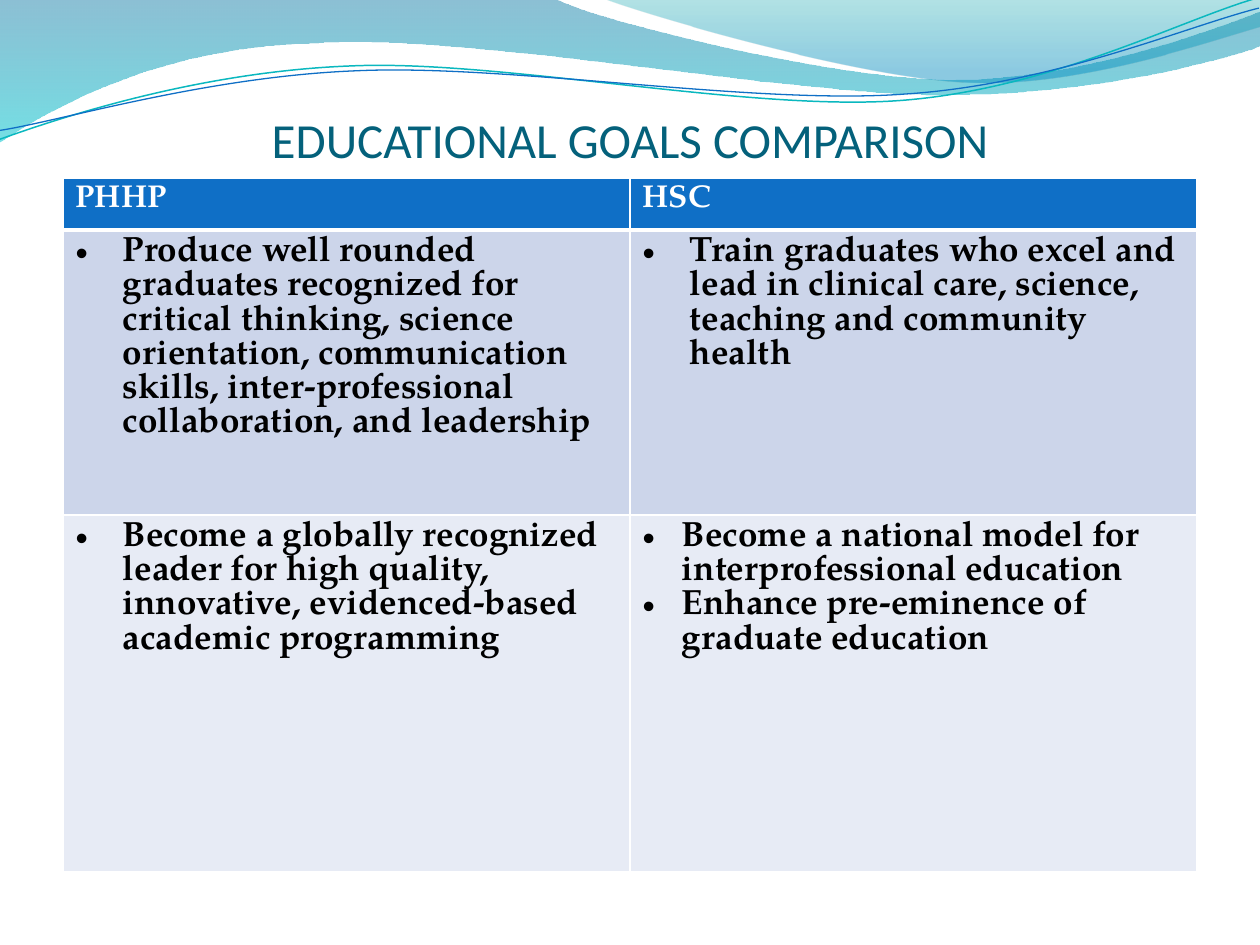
from dataclasses import dataclass

from lxml import etree
from pptx import Presentation
from pptx.dml.color import RGBColor
from pptx.enum.text import MSO_ANCHOR, PP_ALIGN
from pptx.oxml.ns import qn
from pptx.util import Inches, Pt

BOTTOM = MSO_ANCHOR.BOTTOM
CENTER = PP_ALIGN.CENTER


@dataclass(frozen=True)
class Theme:
    title_font: str = "Calibri"
    table_font: str = "TeX Gyre Pagella"
    title_size: int = 28
    header_size: int = 18
    body_size: int = 20
    title: str = "04617B"
    text: str = "000000"
    white: str = "FFFFFF"
    blue: str = "0F6FC6"
    teal: str = "0AB8BF"
    bands: tuple = ("CCD5EA", "E7EBF5")
    wide_wave: tuple = ((0, "0074A1", 45), (1, "00C6CF", 55))
    corner_wave: tuple = ((0, "00A1A9", 30), (0.8, "008BBF", 45))


THEME = Theme()
LINE_TILT = -2.7

WIDE_WAVE = [
    [(0, 0)],
    [(4.4, -0.01)],
    [(4.76, 0.17), (6.64, 0.63), (7.58, 0.63)],
    [(8.53, 0.63), (9.58, 0.26), (10, 0.09)],
    [(10.01, 0.36)],
    [(9.83, 0.44), (8.7, 0.76), (7.46, 0.75)],
    [(6.22, 0.75), (3.82, 0.28), (2.57, 0.34)],
    [(1.29, 0.36), (0.46, 0.83), (-0.01, 1.13)],
    [(0, 0)],
]
CORNER_WAVE = [
    [(4.79, -0.01)],
    [(5.09, 0.11), (6.82, 0.62), (7.69, 0.65)],
    [(8.56, 0.69), (9.61, 0.32), (10, 0.21)],
    [(10, 0)],
    [(4.79, -0.01)],
]
TEAL_LINE = [
    [(-0.02, 0.87)],
    [(0.47, 0.72), (1.58, 0.41), (2.78, 0.42)],
    [(3.96, 0.42), (5.91, 0.93), (7.12, 0.9)],
    [(8.32, 0.87), (9.4, 0.36), (10, 0.22)],
]
BLUE_LINE = [
    [(-0.02, 0.8)],
    [(0.46, 0.75), (1.64, 0.45), (2.83, 0.46)],
    [(4.03, 0.46), (5.96, 0.88), (7.16, 0.85)],
    [(8.35, 0.83), (9.42, 0.42), (10.01, 0.3)],
]

HEADERS = ["PHHP", "HSC"]
GOALS = [
    [
        (3 / 8, ["Produce well rounded graduates recognized for critical thinking, "
                 "science orientation, communication skills, inter-professional "
                 "collaboration, and leadership"]),
        (3 / 8, ["Train graduates who excel and lead in clinical care, science, "
                 "teaching and community health"]),
    ],
    [
        (3 / 8, ["Become a globally recognized leader for high quality, innovative, "
                 "evidenced-based academic programming"]),
        (5 / 16, ["Become a national model for interprofessional education",
                  "Enhance pre-eminence of graduate education"]),
    ],
]


def color(value):
    return RGBColor.from_string(value)


def add_outline(slide, left, top, segments, close):
    corners = [(left + Inches(x), top + Inches(y))
               for segment in segments for x, y in segment]
    builder = slide.shapes.build_freeform(*corners[0])
    builder.add_line_segments(corners[1:], close=close)
    shape = builder.convert_to_shape()
    shape.shadow.inherit = False
    steps = iter(list(shape.element.iter(qn("a:lnTo"))))
    for segment in segments[1:]:
        members = [next(steps) for point in segment]
        if len(members) == 3:
            curve = etree.Element(qn("a:cubicBezTo"))
            members[0].addprevious(curve)
            for member in members:
                curve.append(member[0])
                member.getparent().remove(member)
    return shape


def add_wave(slide, left, top, segments, stops):
    shape = add_outline(slide, left, top, segments, True)
    shape.line.fill.background()
    shape.fill.gradient()
    shape.fill.gradient_angle = 270
    for stop, (position, value, opacity) in zip(shape.fill.gradient_stops, stops):
        stop.position = position
        stop.color.rgb = color(value)
    tags = shape.element.spPr.iter(qn("a:srgbClr"))
    for tag, (position, value, opacity) in zip(tags, stops):
        etree.SubElement(tag, qn("a:alpha"), val=str(opacity * 1000))


def add_wave_line(slide, left, top, segments, value, width):
    shape = add_outline(slide, left, top, segments, False)
    shape.rotation = LINE_TILT
    shape.fill.background()
    shape.line.color.rgb = color(value)
    shape.line.width = Pt(width)


def add_header_waves(slide, left, top):
    add_wave(slide, left, top, WIDE_WAVE, THEME.wide_wave)
    add_wave(slide, left, top, CORNER_WAVE, THEME.corner_wave)
    add_wave_line(slide, left, top, TEAL_LINE, THEME.teal, 0.85)
    add_wave_line(slide, left, top, BLUE_LINE, THEME.blue, 0.75)


def add_run(paragraph, text, font, size, value, bold=False):
    run = paragraph.add_run()
    run.text = text
    run.font.name = font
    run.font.size = Pt(size)
    run.font.bold = bold
    run.font.color.rgb = color(value)


def add_title(slide, left, top, width, height):
    frame = slide.shapes.add_textbox(left, top, width, height).text_frame
    frame.word_wrap = True
    frame.vertical_anchor = BOTTOM
    frame.margin_left = frame.margin_right = frame.margin_bottom = 0
    frame.margin_top = Inches(0.05)
    paragraph = frame.paragraphs[0]
    paragraph.alignment = CENTER
    add_run(paragraph, "EDUCATIONAL GOALS COMPARISON",
            THEME.title_font, THEME.title_size, THEME.title)


def set_bullet(paragraph, indent):
    properties = paragraph._p.get_or_add_pPr()
    properties.set("marL", str(Inches(indent)))
    properties.set("indent", str(-Inches(indent)))
    etree.SubElement(properties, qn("a:buFont"), typeface="Arial")
    etree.SubElement(properties, qn("a:buChar"), char="•")


def style_cell(cell, fill, top_width, bottom_width):
    cell.fill.solid()
    cell.fill.fore_color.rgb = color(fill)
    properties = cell._tc.get_or_add_tcPr()
    widths = {"lnL": 1, "lnR": 1, "lnT": top_width, "lnB": bottom_width}
    for index, (side, width) in enumerate(widths.items()):
        line = etree.Element(qn(f"a:{side}"), w=str(Pt(width)))
        solid = etree.SubElement(line, qn("a:solidFill"))
        etree.SubElement(solid, qn("a:srgbClr"), val=THEME.white)
        properties.insert(index, line)


def add_goals_table(slide, left, top, width, row_heights):
    heights = [Inches(height) for height in row_heights]
    table = slide.shapes.add_table(
        len(heights), len(HEADERS), left, top, width, sum(heights)).table
    for row, height in zip(table.rows, heights):
        row.height = height
    for column, header in enumerate(HEADERS):
        cell = table.cell(0, column)
        style_cell(cell, THEME.blue, 1, 3)
        add_run(cell.text_frame.paragraphs[0], header,
                THEME.table_font, THEME.header_size, THEME.white, True)
    for row, (goals, band) in enumerate(zip(GOALS, THEME.bands), start=1):
        for column, (indent, texts) in enumerate(goals):
            cell = table.cell(row, column)
            style_cell(cell, band, 3 if row == 1 else 1, 1)
            frame = cell.text_frame
            for index, text in enumerate(texts):
                paragraph = frame.add_paragraph() if index else frame.paragraphs[0]
                set_bullet(paragraph, indent)
                add_run(paragraph, text, THEME.table_font,
                        THEME.body_size, THEME.text, True)


def main():
    presentation = Presentation()
    presentation.slide_width = Inches(10)
    presentation.slide_height = Inches(7.5)
    slide = presentation.slides.add_slide(presentation.slide_layouts[6])
    add_header_waves(slide, Inches(0), Inches(0))
    add_title(slide, Inches(0.5), Inches(0.3), Inches(9), Inches(1.04))
    add_goals_table(slide, Inches(0.5), Inches(17 / 12), Inches(9), [0.41, 2.26, 2.83])
    presentation.save("out.pptx")


if __name__ == "__main__":
    main()
